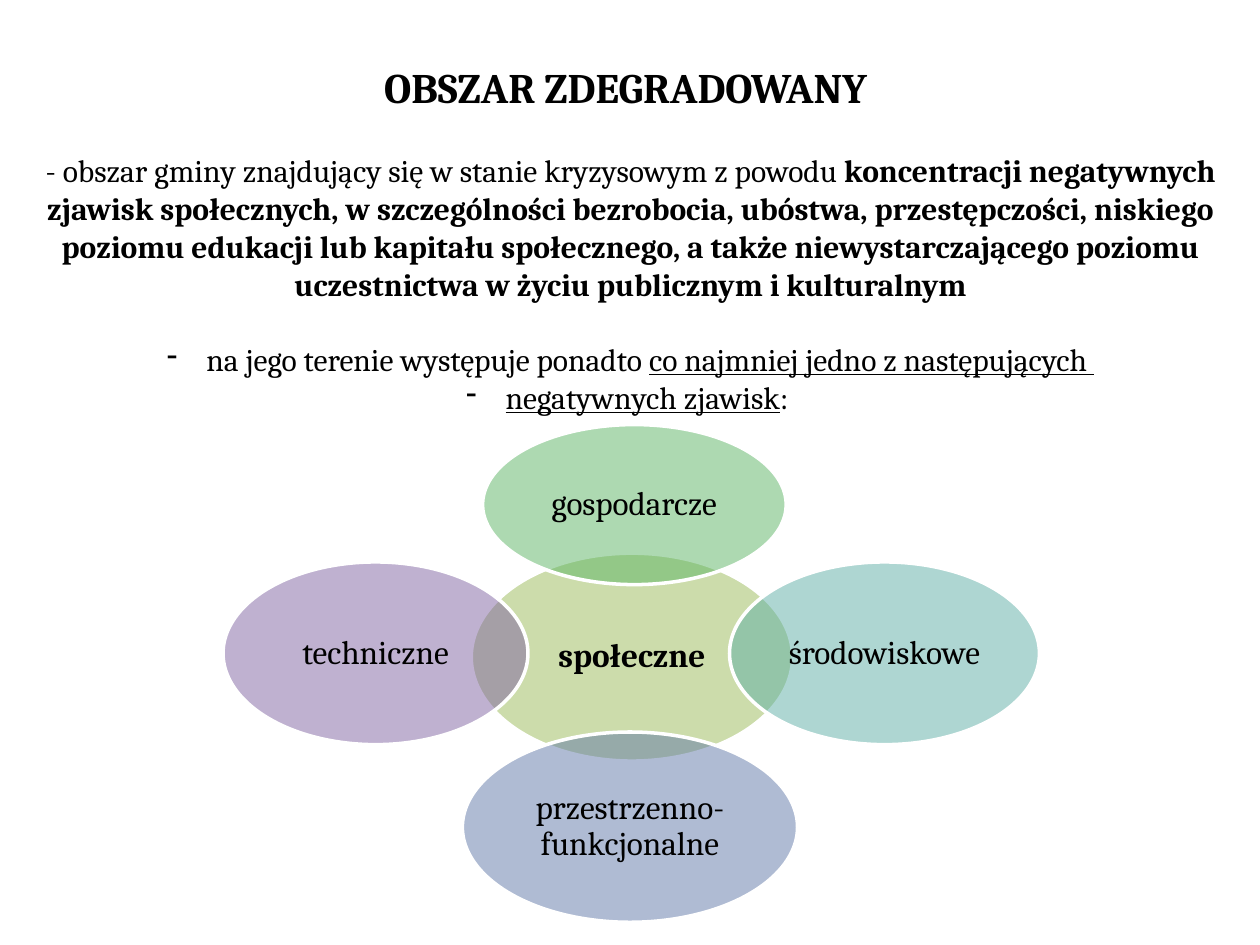
from lxml import etree
from pptx import Presentation
from pptx.dml.color import RGBColor
from pptx.enum import shapes, text
from pptx.oxml import ns
from pptx.util import Inches, Pt

FONT = "Cambria"
TITLE = "OBSZAR ZDEGRADOWANY"
# Each paragraph: bulleted, space before, runs of (wording, bold, underlined)
BODY = [
    (False, 0, [
        ("- obszar gminy znajdujący się w stanie kryzysowym z powodu ", False, False),
        ("koncentracji negatywnych zjawisk społecznych, w szczególności "
         "bezrobocia, ubóstwa, przestępczości, niskiego poziomu edukacji lub "
         "kapitału społecznego, a także niewystarczającego poziomu "
         "uczestnictwa w życiu publicznym i kulturalnym", True, False)]),
    (True, 21.5, [
        ("na jego terenie występuje ponadto ", False, False),
        ("co najmniej jedno z następujących ", False, True)]),
    (True, 0, [
        ("negatywnych zjawisk", False, True),
        (": ", False, False)]),
]
# Wording, fill, left, top, width, height, bold; the centre comes first
OVALS = [
    ("społeczne", "9BBB59", 3.74, 4.39, 2.55, 1.65, True),
    ("gospodarcze", "5CB565", 3.83, 3.37, 2.41, 1.27, False),
    ("środowiskowe", "5EAFA6", 5.79, 4.46, 2.46, 1.45, False),
    ("przestrzenno-funkcjonalne", "6179A8", 3.67, 5.81, 2.66, 1.51, False),
    ("techniczne", "8064A2", 1.77, 4.46, 2.42, 1.45, False),
]


def color(code):
    return RGBColor.from_string(code)


def style(run, size, bold=False, under=False):
    font = run.font
    font.name, font.size, font.bold = FONT, Pt(size), bold
    font.underline = under
    font.color.rgb = color("000000")


def add_box(slide, *place):
    frame = slide.shapes.add_textbox(*map(Inches, place)).text_frame
    frame.word_wrap = True
    frame.auto_size = text.MSO_AUTO_SIZE.SHAPE_TO_FIT_TEXT
    return frame


def add_dash(para):
    props = para._p.get_or_add_pPr()
    props.set("marL", str(Pt(22.5)))
    props.set("indent", str(Pt(-22.5)))
    etree.SubElement(props, ns.qn("a:buFontTx"))
    etree.SubElement(props, ns.qn("a:buChar")).set("char", "-")


def add_body(frame):
    for i, (dash, gap, runs) in enumerate(BODY):
        para = frame.add_paragraph() if i else frame.paragraphs[0]
        para.alignment = text.PP_ALIGN.CENTER
        if gap:
            para.space_before = Pt(gap)
        if dash:
            add_dash(para)
        for words, bold, under in runs:
            run = para.add_run()
            run.text = words
            style(run, 18, bold, under)


def add_oval(slide, words, fill, left, top, width, height, bold):
    oval = slide.shapes.add_shape(
        shapes.MSO_SHAPE.OVAL, *map(Inches, (left, top, width, height)))
    oval.shadow.inherit = False
    oval.fill.solid()
    oval.fill.fore_color.rgb = color(fill)
    tint = oval.fill._xPr.find(".//" + ns.qn("a:srgbClr"))
    etree.SubElement(tint, ns.qn("a:alpha")).set("val", "50000")
    oval.line.color.rgb = color("FFFFFF")
    oval.line.width = Pt(2)
    frame = oval.text_frame
    frame.word_wrap = True
    frame.vertical_anchor = text.MSO_ANCHOR.MIDDLE
    frame.margin_left = frame.margin_right = Inches(0.03)
    frame.margin_top = frame.margin_bottom = Inches(0.03)
    frame.text = words
    para = frame.paragraphs[0]
    para.alignment = text.PP_ALIGN.CENTER
    para.line_spacing = 0.9
    style(para.runs[0], 19, bold)


def main():
    deck = Presentation()
    deck.slide_width, deck.slide_height = Inches(10), Inches(7.5)
    slide = deck.slides.add_slide(deck.slide_layouts[6])
    head = add_box(slide, 1.93, 0.44, 6.07, 0.5)
    head.text = TITLE
    head.paragraphs[0].alignment = text.PP_ALIGN.CENTER
    style(head.paragraphs[0].runs[0], 24, True)
    add_body(add_box(slide, 0.2, 1.15, 9.61, 2.22))
    for oval in OVALS:
        add_oval(slide, *oval)
    deck.save("out.pptx")


if __name__ == "__main__":
    main()
